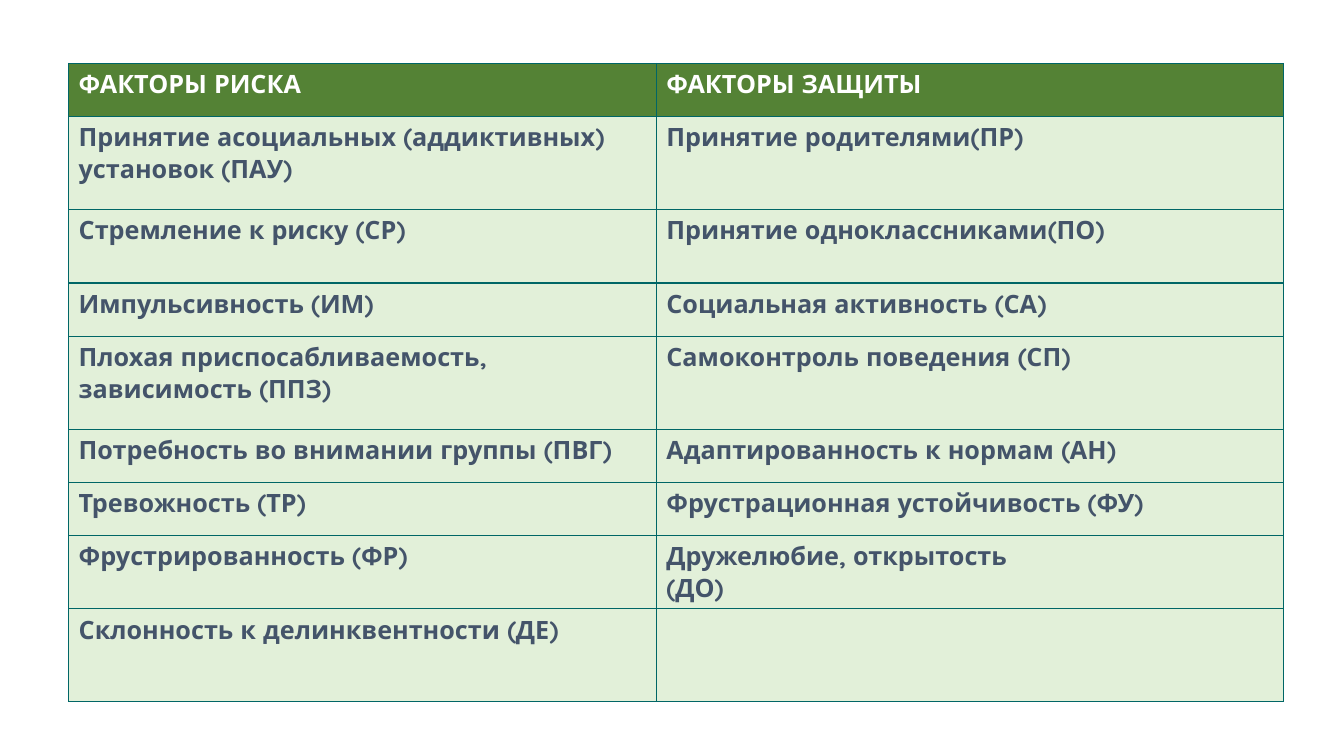
from lxml import etree
from pptx import Presentation
from pptx.dml.color import RGBColor
from pptx.oxml.ns import qn
from pptx.util import Pt

FONT = "Quicksand"
COLORS = {
    "header": "548235",
    "header_text": "FFFFFF",
    "body": "E2F0D9",
    "body_text": "44546A",
    "border": "006666",
}
COLUMN_WIDTHS = (419.8, 447.8)
SHORT, MEDIUM, TALL = 38, 52.4, 66.4

# Row height, risk factor, protective factor; a newline starts a paragraph.
FACTORS = [
    (SHORT, "ФАКТОРЫ РИСКА", "ФАКТОРЫ ЗАЩИТЫ"),
    (TALL, "Принятие асоциальных (аддиктивных)\nустановок (ПАУ)",
     "Принятие родителями(ПР)"),
    (MEDIUM, "Стремление к риску (СР)", "Принятие одноклассниками(ПО)"),
    (SHORT, "Импульсивность (ИМ)", "Социальная активность (СА)"),
    (TALL, "Плохая приспосабливаемость, зависимость (ППЗ)",
     "Самоконтроль поведения (СП)"),
    (SHORT, "Потребность во внимании группы (ПВГ)",
     "Адаптированность к нормам (АН)"),
    (SHORT, "Тревожность (ТР)", "Фрустрационная устойчивость (ФУ)"),
    (MEDIUM, "Фрустрированность (ФР)", "Дружелюбие, открытость\n(ДО)"),
    (TALL, "Склонность к делинквентности (ДЕ)", ""),
]


def set_borders(cell, color, width):
    tc_pr = cell._tc.get_or_add_tcPr()
    # The schema wants border lines ahead of the fill.
    for i, side in enumerate(("lnL", "lnR", "lnT", "lnB")):
        line = etree.Element(qn(f"a:{side}"), w=str(Pt(width)))
        fill = etree.SubElement(line, qn("a:solidFill"))
        etree.SubElement(fill, qn("a:srgbClr"), val=color)
        tc_pr.insert(i, line)


def write_cell(cell, content, kind):
    cell.fill.solid()
    cell.fill.fore_color.rgb = RGBColor.from_string(COLORS[kind])
    set_borders(cell, COLORS["border"], 1)
    tf = cell.text_frame
    for i, line in enumerate(content.split("\n")):
        p = tf.add_paragraph() if i else tf.paragraphs[0]
        if not line:
            continue
        r = p.add_run()
        r.text = line
        r.font.name = FONT
        r.font.size = Pt(18)
        r.font.bold = True
        r.font.color.rgb = RGBColor.from_string(COLORS[f"{kind}_text"])


def add_factor_table(s, left, top):
    width = sum(COLUMN_WIDTHS)
    height = sum(row[0] for row in FACTORS)
    table = s.shapes.add_table(len(FACTORS), len(COLUMN_WIDTHS), Pt(left),
                               Pt(top), Pt(width), Pt(height)).table
    for column, column_width in zip(table.columns, COLUMN_WIDTHS):
        column.width = Pt(column_width)
    for i, (row_height, *contents) in enumerate(FACTORS):
        table.rows[i].height = Pt(row_height)
        for cell, content in zip(table.rows[i].cells, contents):
            write_cell(cell, content, "body" if i else "header")


def main():
    prs = Presentation()
    prs.slide_width, prs.slide_height = Pt(960), Pt(540)
    s = prs.slides.add_slide(prs.slide_layouts[6])
    add_factor_table(s, 49, 45.4)
    prs.save("out.pptx")


if __name__ == "__main__":
    main()
